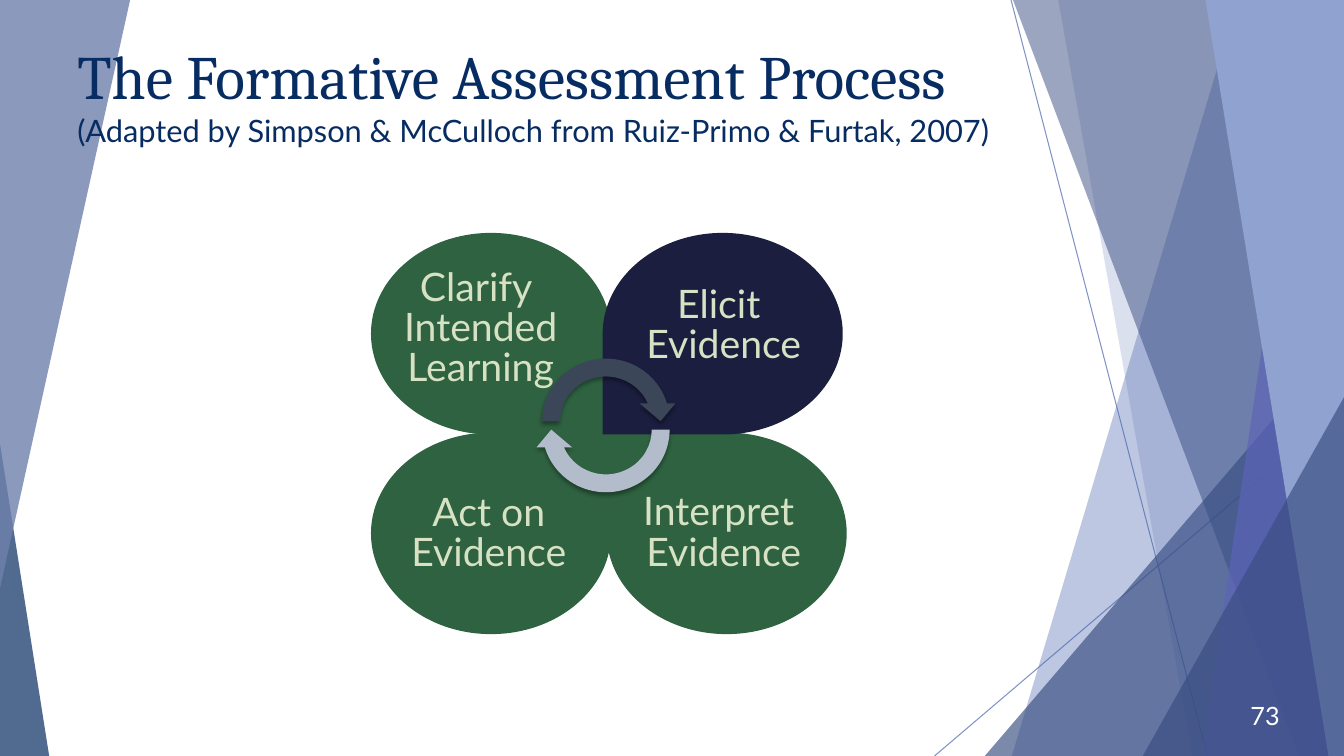
from lxml import etree
from pptx import Presentation
from pptx.dml.color import RGBColor
from pptx.enum.shapes import MSO_CONNECTOR as LINK, MSO_SHAPE as SHAPE
from pptx.enum.text import MSO_ANCHOR as ANCHOR, MSO_AUTO_SIZE as FIT, PP_ALIGN as ALIGN
from pptx.oxml.ns import qn
from pptx.util import Cm, Pt

W, H = 33.87, 19.05
NAVY, SLATE, BLUE, GREEN = "072C62", "384C81", "4A66AC", "2E6240"


def color(value):
    return RGBColor.from_string(value)


def set_alpha(sp, percent):
    if percent < 100:
        clr = sp._element.spPr.find(".//" + qn("a:srgbClr"))
        etree.SubElement(clr, qn("a:alpha")).set("val", str(percent * 1000))


def paint(sp, fill, alpha=100):
    sp.shadow.inherit = False
    sp.fill.solid()
    sp.fill.fore_color.rgb = color(fill)
    set_alpha(sp, alpha)
    sp.line.fill.background()
    return sp


def add_preset(s, kind, x, y, w, h, fill, alpha=100, flip=""):
    sp = s.shapes.add_shape(kind, Cm(x), Cm(y), Cm(w), Cm(h))
    for axis in flip:
        sp._element.spPr.find(qn("a:xfrm")).set("flip" + axis, "1")
    return paint(sp, fill, alpha)


def add_wedge(s, x, y, w, h, fill, alpha, apex, flip=""):
    """Right triangle whose apex is at the left (0) or right (1) edge."""
    sp = add_preset(s, SHAPE.ISOSCELES_TRIANGLE, x, y, w, h, fill, alpha, flip)
    sp.adjustments[0] = apex


def add_band(s, x, y, w, h, top, bottom, fill, alpha):
    """Slanted left edge from top to bottom, filled up to the right of the box."""
    fb = s.shapes.build_freeform(Cm(x + top), Cm(y))
    fb.add_line_segments([(Cm(x + dx), Cm(y + dy))
                          for dx, dy in ((w, 0), (w, h), (bottom, h))])
    paint(fb.convert_to_shape(), fill, alpha)


def add_hairline(s, x1, y1, x2, y2):
    cn = s.shapes.add_connector(LINK.STRAIGHT, Cm(x1), Cm(y1), Cm(x2), Cm(y2))
    cn.line.color.rgb = color(BLUE)
    cn.line.width = Pt(0.75)
    set_alpha(cn, 70)
    etree.SubElement(cn._element.spPr, qn("a:effectLst"))


def add_text(s, x, y, w, h, lines, fmt, frame=None, para=None):
    """Text box with one paragraph per line; each line is a list of (text, size, font)."""
    tf = s.shapes.add_textbox(Cm(x), Cm(y), Cm(w), Cm(h)).text_frame
    for name, value in {"word_wrap": True, **(frame or {})}.items():
        setattr(tf, name, value)
    for i, runs in enumerate(lines):
        p = tf.add_paragraph() if i else tf.paragraphs[0]
        for name, value in (para or {}).items():
            setattr(p, name, value)
        for j, (text, size, font) in enumerate(runs):
            if j:
                p.add_line_break()
            r = p.add_run()
            r.text = text
            r.font.color.rgb = color(fmt)
            for name, value in {"size": Pt(size), "name": font}.items():
                setattr(r.font, name, value)


def right_facets(s, x, y, w, h):
    add_hairline(s, x + 1.93, y, x + 6.88, y + h)
    add_hairline(s, x + w, y + 10.26, x, y + h)
    facets = [
        (add_band, 7.64, 1.95, BLUE, 36),
        (add_band, 3.12, 6.5, BLUE, 20),
        (add_wedge, 1.27, 8.48, SLATE, 66),
        (add_band, 1.98, 9.19, SLATE, 50),
        (add_band, 9.55, 6.73, "5C64B7", 70),
        (add_band, 6.83, 9.93, "90A2CF", 100),
        (add_wedge, 5.25, 10.01, SLATE, 66),
    ]
    for draw, a, b, fill, alpha in facets:
        if draw is add_band:
            add_band(s, x, y, w, h, a, b, fill, alpha)
        else:
            add_wedge(s, x + a, y + b, w - a, h - b, fill, alpha, 1)


def left_facets(s, x, y, w, h):
    add_wedge(s, x, y + 11.18, 1.24, h - 11.18, NAVY, 70, 0)
    add_wedge(s, x, y, w, 14.83, "6F81AC", 80, 0, "V")


def heading(s, x, y, w, h):
    add_text(s, x, y, w, h, [[
        ("The Formative Assessment Process", 44, "Cambria"),
        ("(Adapted by Simpson & McCulloch from Ruiz-Primo & Furtak, 2007)", 22, "Lato"),
    ]], NAVY, {"vertical_anchor": ANCHOR.MIDDLE})


def cycle_arrow(s, x, y, fill, rotation):
    sp = add_preset(s, SHAPE.CIRCULAR_ARROW, x, y, 3.66, 3.61, fill)
    sp.rotation = rotation
    effects = sp._element.spPr.find(qn("a:effectLst"))
    shadow = etree.SubElement(effects, qn("a:outerShdw"), blurRad=str(Pt(3)),
                              dist=str(Pt(2)), dir="5400000", rotWithShape="0")
    clr = etree.SubElement(shadow, qn("a:srgbClr"), val="000000")
    etree.SubElement(clr, qn("a:alpha"), val="35000")


def assessment_cycle(s, x, y):
    petals = [(0, 5.03, "", GREEN), (0, 0, "V", GREEN),
              (5.94, 5.03, "H", GREEN), (5.84, 0, "HV", "1B1E3E")]
    for dx, dy, flip, fill in petals:
        add_preset(s, SHAPE.TEAR, x + dx, y + dy, 6.05, 5.08, fill, flip=flip)

    labels = [(0.43, 1.12, 4.67, 3, ["Clarify ", "Intended", "Learning"]),
              (6.4, 1.55, 4.98, 1.88, ["Elicit ", "Evidence"]),
              (0.48, 6.8, 4.98, 1.88, ["Act on", "Evidence"]),
              (6.4, 6.78, 4.98, 1.88, ["Interpret ", "Evidence"])]
    para = {"alignment": ALIGN.CENTER, "line_spacing": 0.5, "space_after": Pt(12)}
    for dx, dy, w, h, words in labels:
        add_text(s, x + dx, y + dy, w, h, [[(word, 28, "Lato")] for word in words],
                 "D7E1C3", {"auto_size": FIT.SHAPE_TO_FIT_TEXT}, para)

    cycle_arrow(s, x + 4.09, y + 2.94, "3B4759", 0)
    cycle_arrow(s, x + 4.09, y + 3.15, "B2BCCB", 180)


def page_number(s, x, y, w, h):
    add_text(s, x, y, w, h, [[("73", 18, "Lato")]], "FFFFFF",
             {"vertical_anchor": ANCHOR.MIDDLE}, {"alignment": ALIGN.RIGHT})


def main():
    prs = Presentation()
    prs.slide_width, prs.slide_height = Cm(W), Cm(H)
    s = prs.slides.add_slide(prs.slide_layouts[6])
    right_facets(s, 23.55, 0, W - 23.55, H)
    left_facets(s, 0, 0, 3.28, H)
    heading(s, 1.7, 0.76, 30.48, 3.18)
    assessment_cycle(s, 9.35, 5.87)
    page_number(s, 30.6, 17.53, 1.9, 1.02)
    prs.save("out.pptx")


if __name__ == "__main__":
    main()
